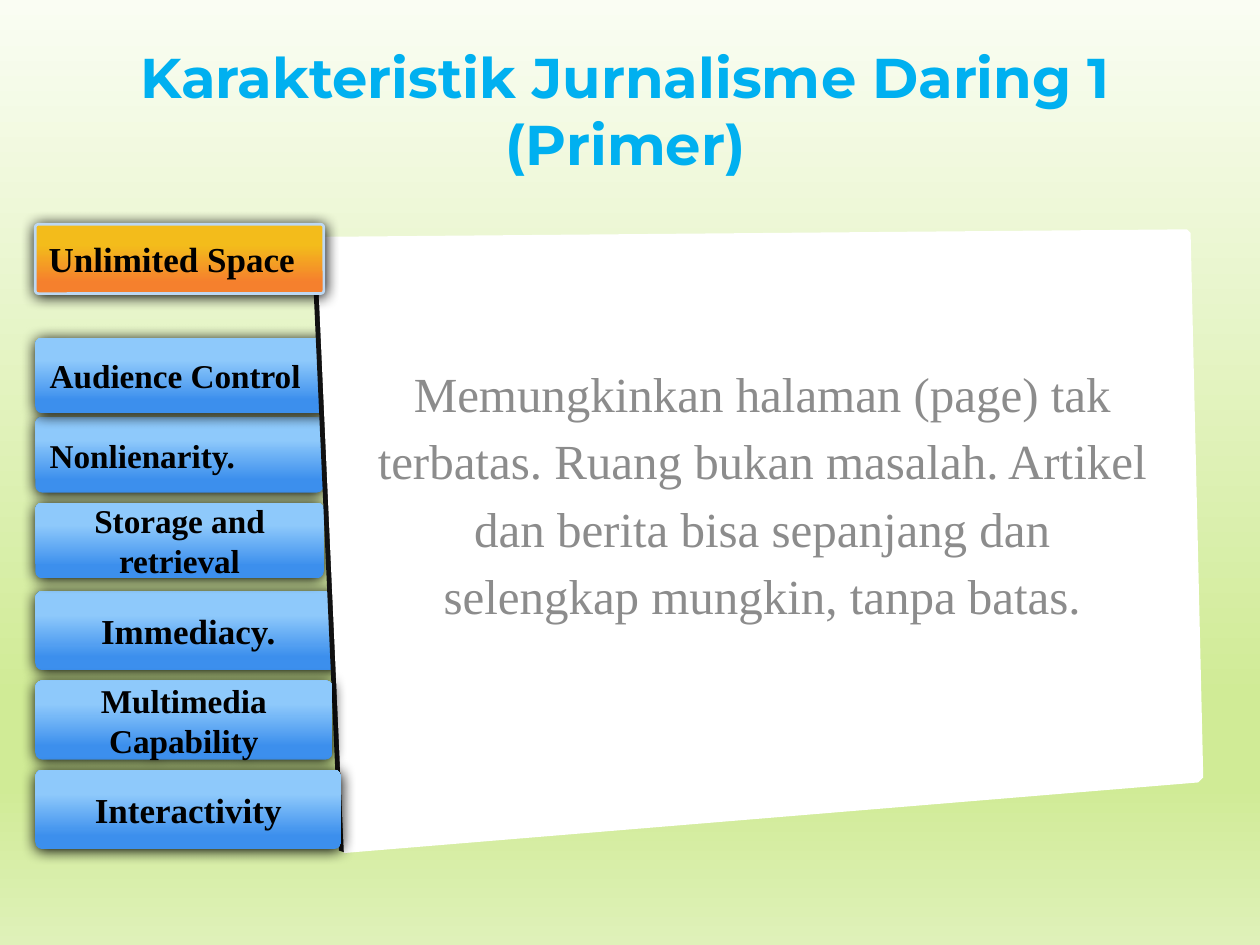
from lxml import etree
from pptx import Presentation, util as u
from pptx.dml.color import RGBColor
from pptx.enum import shapes, text
from pptx.oxml.ns import qn

COLORS = {"title": "00B0F0", "body": "8C8C8C", "label": "000000", "panel": "FFFFFF",
          "edge": "111111", "border": "BDD8F3"}
BACKDROP = [(0, "FAFDF3"), (74, "D0EB96"), (83, "D0EB96"), (100, "DFF1B9")]
BLUE = [(17, "3C8FED"), (70, "8EC9FB")]
ORANGE = [(17, "F5802D"), (70, "F3BC1B")]
SERIF = "Times New Roman"
LEFT, CENTER = text.PP_ALIGN.LEFT, text.PP_ALIGN.CENTER

TITLE = ["Karakteristik Jurnalisme Daring 1", "(Primer)"]
BODY = ("Memungkinkan halaman (page) tak terbatas. Ruang bukan masalah. Artikel dan berita "
        "bisa sepanjang dan selengkap mungkin, tanpa batas.")
TABS_BEHIND = [
    ("Immediacy.", 4.69, 2.43, 0.63, 20, CENTER),
    ("Nonlienarity.", 3.31, 2.29, 0.6, 19, LEFT),
    ("Storage and retrieval", 3.99, 2.29, 0.6, 19, CENTER),
    ("Audience Control", 2.68, 2.36, 0.6, 19, LEFT),
]
ACTIVE_TAB = ("Unlimited Space", 1.78, 2.29, 0.55, 20, LEFT)
TABS_FRONT = [
    ("Multimedia Capability", 5.4, 2.36, 0.63, 19, CENTER),
    ("Interactivity", 6.11, 2.43, 0.63, 20, CENTER),
]
TAB_LEFT = 0.28
PANEL = [(2.51, 1.88), (9.42, 1.82), (9.45, 1.85), (9.55, 6.17), (9.51, 6.21), (2.73, 6.77)]
PANEL_EDGE = [(2.47, 1.88), (2.53, 1.88), (2.75, 6.77), (2.69, 6.75)]


def rgb(value):
    return RGBColor.from_string(value)


def set_gradient(fill, owner, stops, angle):
    fill.gradient()
    fill.gradient_angle = angle
    stop_list = owner.find(".//" + qn("a:gsLst"))
    for stop in list(stop_list):
        stop_list.remove(stop)
    for position, color in stops:
        stop = etree.SubElement(stop_list, qn("a:gs"), pos=str(position * 1000))
        etree.SubElement(stop, qn("a:srgbClr"), val=color)


def add_shadow(shape, blur, distance):
    shape.shadow.inherit = False
    effects = shape._element.spPr.find(qn("a:effectLst"))
    shadow = etree.SubElement(effects, qn("a:outerShdw"), blurRad=str(u.Pt(blur)),
                              dist=str(u.Pt(distance)), dir="5400000", rotWithShape="0")
    etree.SubElement(shadow, qn("a:srgbClr"), val=COLORS["label"])


def write(frame, lines, font, size, color, align, bold=False):
    frame.text = "\n".join(lines)
    for paragraph in frame.paragraphs:
        paragraph.alignment = align
        for run in paragraph.runs:
            run.font.name = font
            run.font.size = u.Pt(size)
            run.font.bold = bold
            run.font.color.rgb = rgb(color)


def add_tab(slide, tab, stops, corner):
    label, top, width, height, size, align = tab
    button = slide.shapes.add_shape(
        shapes.MSO_SHAPE.ROUNDED_RECTANGLE, u.Inches(TAB_LEFT), u.Inches(top),
        u.Inches(width), u.Inches(height))
    button.adjustments[0] = corner
    set_gradient(button.fill, button._element, stops, 90)
    button.line.fill.background()
    add_shadow(button, 8.5, 1)
    button.text_frame.word_wrap = True
    button.text_frame.vertical_anchor = text.MSO_ANCHOR.MIDDLE
    write(button.text_frame, [label], SERIF, size, COLORS["label"], align, True)
    return button


def add_outline(slide, points, color):
    corners = [(u.Inches(x), u.Inches(y)) for x, y in points]
    builder = slide.shapes.build_freeform(*corners[0])
    builder.add_line_segments(corners[1:], close=True)
    outline = builder.convert_to_shape()
    outline.fill.solid()
    outline.fill.fore_color.rgb = rgb(color)
    outline.line.fill.background()
    outline.shadow.inherit = False


def add_text(slide, left, top, width, height):
    return slide.shapes.add_textbox(
        u.Inches(left), u.Inches(top), u.Inches(width), u.Inches(height)).text_frame


def main():
    deck = Presentation()
    deck.slide_width, deck.slide_height = u.Inches(10), u.Inches(7.5)
    slide = deck.slides.add_slide(deck.slide_layouts[6])
    set_gradient(slide.background.fill, slide._element, BACKDROP, 270)

    for tab in TABS_BEHIND:
        add_tab(slide, tab, BLUE, 0.092)

    title = add_text(slide, 0.7, 0.29, 8.53, 1.18)
    title.word_wrap = False
    write(title, TITLE, "Montserrat", 32, COLORS["title"], CENTER, True)

    add_outline(slide, PANEL_EDGE, COLORS["edge"])
    add_outline(slide, PANEL, COLORS["panel"])

    body = add_text(slide, 2.87, 2.07, 6.36, 4.28)
    body.word_wrap = True
    body.vertical_anchor = text.MSO_ANCHOR.MIDDLE
    body.margin_bottom = u.Inches(0.7)
    write(body, [BODY], SERIF, 28, COLORS["body"], CENTER)
    body.paragraphs[0].line_spacing = 1.15

    active = add_tab(slide, ACTIVE_TAB, ORANGE, 0.044)
    active.line.color.rgb = rgb(COLORS["border"])
    active.line.width = u.Pt(1.5)
    for tab in TABS_FRONT:
        add_tab(slide, tab, BLUE, 0.092)

    deck.save("out.pptx")


if __name__ == "__main__":
    main()
